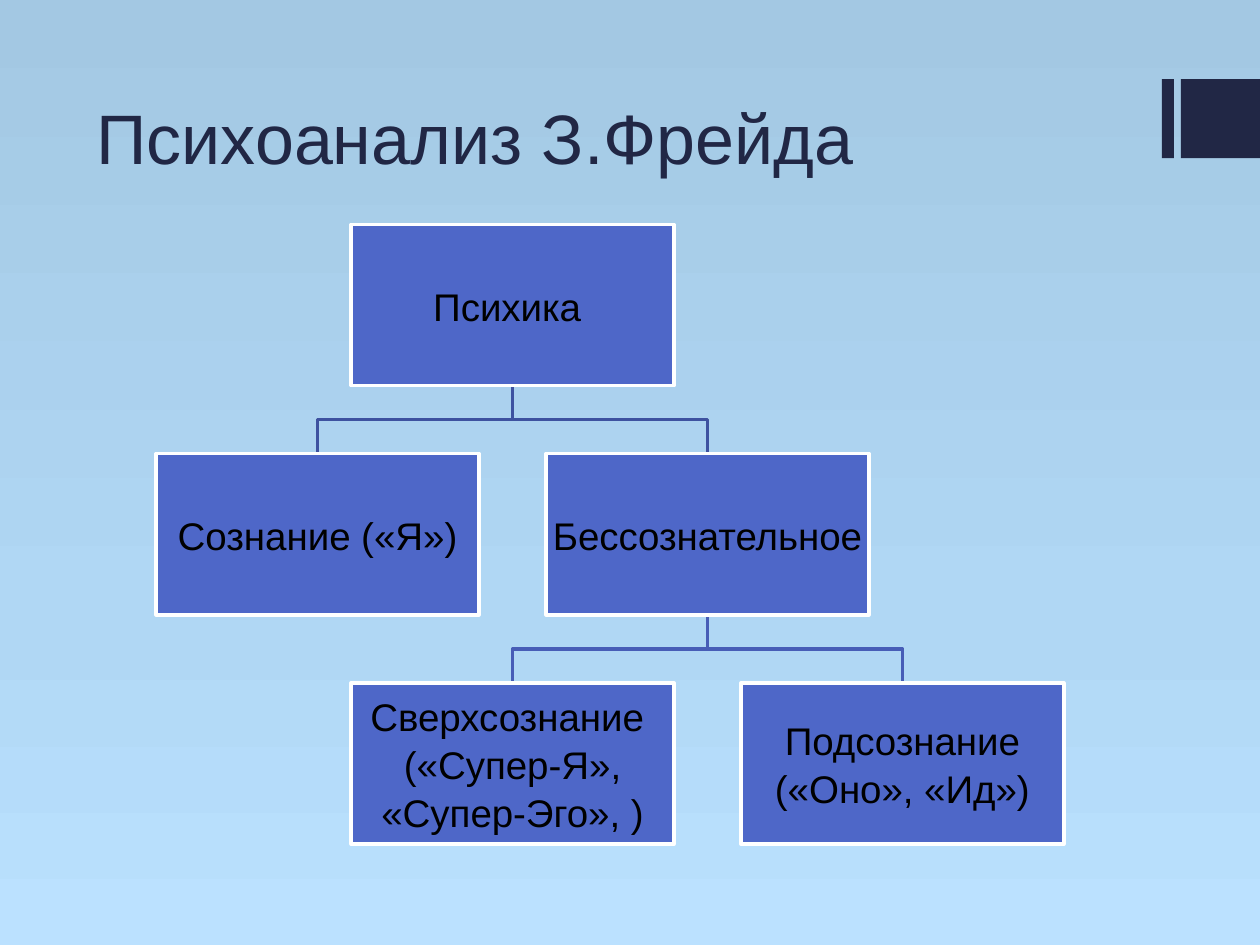
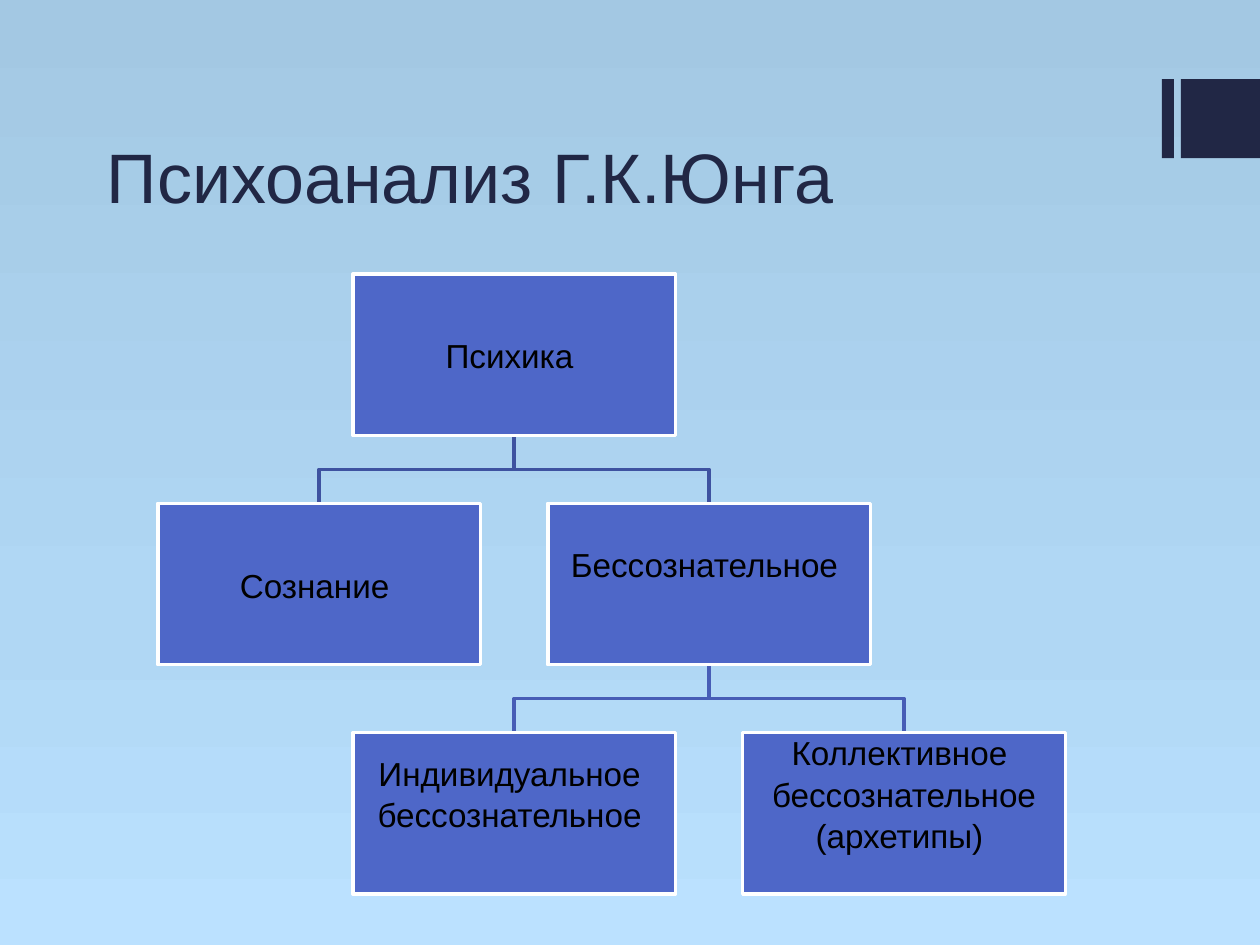
"""Build two slides that show the structure of the psyche as trees."""

from dataclasses import dataclass
from typing import Any

from pptx import Presentation
from pptx.dml.color import RGBColor
from pptx.enum.shapes import MSO_SHAPE
from pptx.enum.text import MSO_ANCHOR, PP_ALIGN
from pptx.oxml import parse_xml
from pptx.oxml.ns import nsdecls, qn
from pptx.util import Pt

NAVY = RGBColor(0x21, 0x27, 0x45)
BLUE = RGBColor(0x4E, 0x67, 0xC8)
WHITE = RGBColor(0xFF, 0xFF, 0xFF)
BLACK = RGBColor(0x00, 0x00, 0x00)
BRANCH_COLOURS = {1: RGBColor(0x3E, 0x52, 0xA0), 2: RGBColor(0x47, 0x5D, 0xB6)}
SKY_STOPS = (
    (0, RGBColor(0xA3, 0xC8, 0xE3)),
    (65, RGBColor(0xB0, 0xD7, 0xF4)),
    (100, RGBColor(0xBB, 0xE1, 0xFF)),
)

FONT = "Arial"
NODE_WIDTH, NODE_HEIGHT = 184.4, 92.2
COLUMN_STEP, ROW_STEP = 111.4, 131
LINE_WIDTH = 2
MARK_TOP, MARK_HEIGHT = 45.2, 45.2
MARKS = ((664, 6.8), (674.8, 45.2))


@dataclass(frozen=True)
class Node:
    """One box of a tree, placed by row and column."""

    row: int
    column: int
    lines: tuple[str, ...]
    parent_column: int | None = None
    bottom_inset: float = 1


@dataclass(frozen=True)
class Tree:
    """A titled tree with its place and text size."""

    title: str
    title_left: float
    title_top: float
    left: float
    top: float
    text_size: float
    nodes: tuple[Node, ...]

    def corner(self, row: int, column: int) -> tuple[float, float]:
        """Return the upper left corner of a grid place."""
        return self.left + column * COLUMN_STEP, self.top + row * ROW_STEP


TREES = (
    Tree("Психоанализ З.Фрейда", 48.2, 15.1, 89.3, 128.2, 22, (
        Node(0, 1, ("Психика ",)),
        Node(1, 0, ("Сознание («Я»)",), 1),
        Node(1, 2, ("Бессознательное ",), 1),
        Node(2, 1, ("Сверхсознание ", "(«Супер-Я», «Супер-Эго», )"), 2),
        Node(2, 3, ("Подсознание («Оно», «Ид»)",), 2),
    )),
    Tree("Психоанализ Г.К.Юнга", 54, 37.4, 90.2, 156.6, 19, (
        Node(0, 1, ("Психика ",)),
        Node(1, 0, ("Сознание ",), 1),
        Node(1, 2, ("Бессознательное ",), 1, 24),
        Node(2, 1, ("Индивидуальное ", "бессознательное "), 2, 24),
        Node(2, 3, ("Коллективное ", "бессознательное", "(архетипы) "), 2, 24),
    )),
)


def apply_format(target: Any, values: dict[str, Any]) -> None:
    """Set each named attribute on the target."""
    for name, value in values.items():
        setattr(target, name, value)


def set_background(master: Any) -> None:
    """Give the master a vertical sky gradient."""
    fill = master.background.fill
    fill.gradient()
    fill.gradient_angle = 270
    stops = "".join(
        f'<a:gs pos="{place * 1000}"><a:srgbClr val="{colour}"/></a:gs>'
        for place, colour in SKY_STOPS
    )
    old_stops = master.element.find(f".//{qn('a:gsLst')}")
    new_stops = parse_xml(f"<a:gsLst {nsdecls('a')}>{stops}</a:gsLst>")
    old_stops.getparent().replace(old_stops, new_stops)


def add_rectangle(page: Any, left: float, top: float, width: float,
                  height: float, colour: RGBColor) -> Any:
    """Add a plain rectangle without an outline."""
    box = page.shapes.add_shape(
        MSO_SHAPE.RECTANGLE, Pt(left), Pt(top), Pt(width), Pt(height))
    box.shadow.inherit = False
    box.fill.solid()
    box.fill.fore_color.rgb = colour
    box.line.fill.background()
    return box


def set_line(shape: Any, colour: RGBColor) -> None:
    """Give a shape a solid line."""
    shape.line.color.rgb = colour
    shape.line.width = Pt(LINE_WIDTH)


def write_lines(box: Any, lines: tuple[str, ...], size: float, colour: RGBColor,
                frame_values: dict[str, Any], para_values: dict[str, Any]) -> None:
    """Write each line as a paragraph of the box."""
    frame = box.text_frame
    apply_format(frame, {"word_wrap": True, **frame_values})
    for index, line in enumerate(lines):
        para = frame.add_paragraph() if index else frame.paragraphs[0]
        apply_format(para, para_values)
        span = para.add_run()
        span.text = line
        apply_format(span.font, {"name": FONT, "size": Pt(size)})
        span.font.color.rgb = colour


def add_title(page: Any, tree: Tree) -> None:
    """Add the slide title."""
    box = page.shapes.add_textbox(
        Pt(tree.title_left), Pt(tree.title_top), Pt(576), Pt(90.7))
    write_lines(box, (tree.title,), 40, NAVY,
                {"vertical_anchor": MSO_ANCHOR.BOTTOM},
                {"alignment": PP_ALIGN.LEFT})


def add_branch(page: Any, tree: Tree, node: Node) -> None:
    """Draw the bent line from a parent down to its node."""
    parent_left, parent_top = tree.corner(node.row - 1, node.parent_column)
    node_left, node_top = tree.corner(node.row, node.column)
    start_x, end_x = (left + NODE_WIDTH / 2 for left in (parent_left, node_left))
    start_y = parent_top + NODE_HEIGHT
    middle_y = (start_y + node_top) / 2
    builder = page.shapes.build_freeform(Pt(start_x), Pt(start_y))
    corners = ((start_x, middle_y), (end_x, middle_y), (end_x, node_top))
    builder.add_line_segments([(Pt(x), Pt(y)) for x, y in corners], close=False)
    branch = builder.convert_to_shape()
    branch.shadow.inherit = False
    branch.fill.background()
    set_line(branch, BRANCH_COLOURS[node.row])


def add_node(page: Any, tree: Tree, node: Node) -> None:
    """Draw one box of the tree with its text."""
    box = add_rectangle(page, *tree.corner(node.row, node.column),
                        NODE_WIDTH, NODE_HEIGHT, BLUE)
    set_line(box, WHITE)
    frame_values = {
        "vertical_anchor": MSO_ANCHOR.MIDDLE,
        "margin_left": Pt(1),
        "margin_right": Pt(1),
        "margin_top": Pt(1),
        "margin_bottom": Pt(node.bottom_inset),
    }
    write_lines(box, node.lines, tree.text_size, BLACK, frame_values,
                {"alignment": PP_ALIGN.CENTER, "line_spacing": 1.04})


def add_tree_page(deck: Any, tree: Tree) -> None:
    """Add a slide with its marks, title and tree."""
    page = deck.slides.add_slide(deck.slide_layouts[6])
    for left, width in MARKS:
        add_rectangle(page, left, MARK_TOP, width, MARK_HEIGHT, NAVY)
    add_title(page, tree)
    for node in reversed(tree.nodes):
        if node.parent_column is not None:
            add_branch(page, tree, node)
    for node in tree.nodes:
        add_node(page, tree, node)


def main() -> None:
    """Build and save the deck."""
    deck = Presentation()
    apply_format(deck, {"slide_width": Pt(720), "slide_height": Pt(540)})
    set_background(deck.slide_master)
    for tree in TREES:
        add_tree_page(deck, tree)
    deck.save("out.pptx")


if __name__ == "__main__":
    main()
